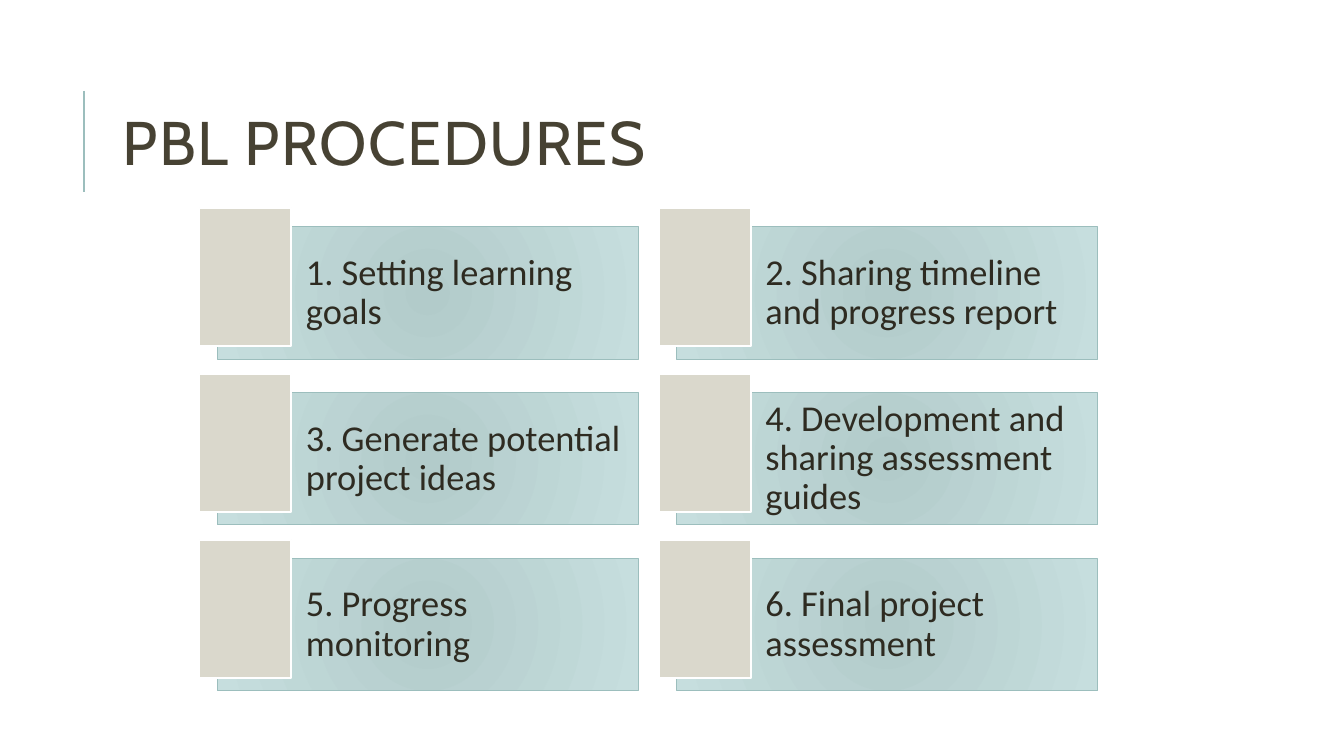
import pptx
import pptx.util
import pptx.dml.color
import pptx.enum.shapes
import pptx.enum.text
import pptx.oxml
import pptx.oxml.ns
from pptx.util import Cm

COLORS = {
    "title": "474233",
    "text": "2E2B21",
    "accent": "9CBEBD",
    "card_center": "B2CBCA",
    "card_edge": "C6DEDE",
    "tile": "DAD8CC",
    "white": "FFFFFF",
}
STEPS = [
    "Setting learning goals",
    "Sharing timeline and progress report",
    "Generate potential project ideas",
    "Development and sharing assessment guides",
    "Progress monitoring",
    "Final project assessment",
]


def rgb(name):
    return pptx.dml.color.RGBColor.from_string(COLORS[name])


class SlideBuilder:
    """Draws styled elements on the current slide."""

    def __init__(self, slide):
        self.shapes = slide.shapes

    def set_text(self, sp, text, size, font, color, spacing):
        tf = sp.text_frame
        tf.word_wrap = True
        tf.vertical_anchor = pptx.enum.text.MSO_ANCHOR.MIDDLE
        p = tf.paragraphs[0]
        p.alignment = pptx.enum.text.PP_ALIGN.LEFT
        p.line_spacing = spacing
        p.font.size = pptx.util.Pt(size)
        p.font.name = font
        p.font.color.rgb = rgb(color)
        r = p.add_run()
        r.text = text
        return r

    def title(self, text, x, y, w, h):
        sp = self.shapes.add_textbox(Cm(x), Cm(y), Cm(w), Cm(h))
        r = self.set_text(sp, text, 44, "Cabin", "title", 0.8)
        r._r.get_or_add_rPr().set("spc", "100")

    def rule(self, x, y1, y2):
        line = self.shapes.add_connector(
            pptx.enum.shapes.MSO_CONNECTOR.STRAIGHT, Cm(x), Cm(y1), Cm(x), Cm(y2))
        line.line.color.rgb = rgb("accent")
        line.line.width = pptx.util.Pt(1.5)
        line._element.spPr.append(pptx.oxml.parse_xml(
            f"<a:effectLst {pptx.oxml.ns.nsdecls('a')}/>"))

    def rect(self, x, y, w, h, line_color, line_width):
        sp = self.shapes.add_shape(
            pptx.enum.shapes.MSO_SHAPE.RECTANGLE, Cm(x), Cm(y), Cm(w), Cm(h))
        sp.shadow.inherit = False
        sp.line.color.rgb = rgb(line_color)
        sp.line.width = pptx.util.Pt(line_width)
        return sp

    def card(self, text, x, y):
        sp = self.rect(x, y, 10.62, 3.33, "accent", 0.75)
        self.radial_fill(sp)
        tf = sp.text_frame
        tf.margin_left = Cm(2.24)
        tf.margin_top = tf.margin_right = tf.margin_bottom = Cm(0.28)
        self.set_text(sp, text, 26, "Calibri", "text", 0.9)

    def radial_fill(self, sp):
        sp.fill.gradient()
        for stop, name in zip(sp.fill.gradient_stops, ("card_center", "card_edge")):
            stop.color.rgb = rgb(name)
        grad = sp._element.spPr.find(pptx.oxml.ns.qn("a:gradFill"))
        grad.replace(grad.find(pptx.oxml.ns.qn("a:lin")), pptx.oxml.parse_xml(
            f"<a:path {pptx.oxml.ns.nsdecls('a')} path='circle'>"
            "<a:fillToRect l='100000' t='100000' r='100000' b='100000'/></a:path>"))

    def tile(self, x, y):
        sp = self.rect(x, y, 2.31, 3.48, "white", 1.25)
        sp.fill.solid()
        sp.fill.fore_color.rgb = rgb("tile")


def main():
    prs = pptx.Presentation()
    prs.slide_width, prs.slide_height = Cm(33.87), Cm(19.05)
    builder = SlideBuilder(prs.slides.add_slide(prs.slide_layouts[6]))
    builder.rule(2.12, 2.29, 4.83)
    builder.title("PBL PROCEDURES", 2.84, 1.63, 27, 4.17)
    for i, step in enumerate(STEPS):
        row, col = divmod(i, 2)
        x, y = 5.47 + col * 11.58, 5.72 + row * 4.18
        builder.card(f"{i + 1}. {step}", x, y)
        builder.tile(x - 0.44, y - 0.48)
    prs.save("out.pptx")


if __name__ == "__main__":
    main()
